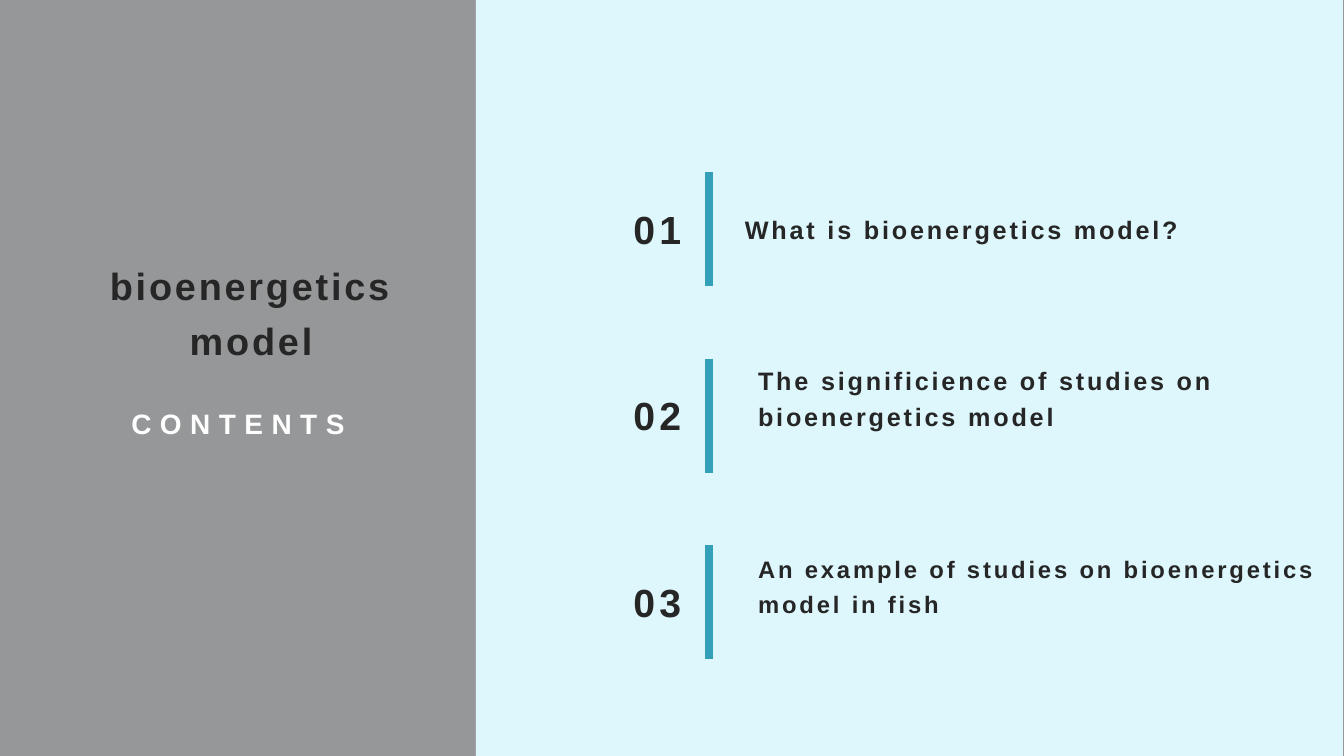
import pptx
import pptx.dml.color
import pptx.enum.shapes
import pptx.enum.text
import pptx.oxml.ns
import pptx.util
from lxml import etree

Inches = pptx.util.Inches
RGBColor = pptx.dml.color.RGBColor
ALIGN = pptx.enum.text.PP_ALIGN
ANCHOR = pptx.enum.text.MSO_ANCHOR

BACKGROUND = RGBColor(0xF9, 0xFD, 0xFE)
BLACK = RGBColor(0x00, 0x00, 0x00)
PALE_BLUE = RGBColor(0xDD, 0xF7, 0xFC)
TEAL = RGBColor(0x34, 0x9F, 0xB9)
DARK = RGBColor(0x26, 0x26, 0x26)
WHITE = RGBColor(0xFF, 0xFF, 0xFF)

TOPICS = [
    ("01", "What is bioenergetics model?", 18, (1.22, 0.23, 5.63, 0.49)),
    ("02", "The significience of studies on bioenergetics model", 18, (1.35, 0.21, 6.39, 0.51)),
    ("03", "An example of studies on bioenergetics model in fish", 17, (1.35, 0.23, 5.92, 0.49)),
]
TOPIC_LEFT, TOPIC_TOP, TOPIC_PITCH = 6.07, 1.71, 1.85


def add_panel(slide, left, top, width, height, color, opacity=None):
    panel = slide.shapes.add_shape(
        pptx.enum.shapes.MSO_SHAPE.RECTANGLE,
        Inches(left), Inches(top), Inches(width), Inches(height))
    panel.shadow.inherit = False
    panel.fill.solid()
    panel.fill.fore_color.rgb = color
    panel.line.fill.background()
    if opacity is not None:
        color_element = next(panel.fill._xPr.iter(pptx.oxml.ns.qn("a:srgbClr")))
        alpha = etree.SubElement(color_element, pptx.oxml.ns.qn("a:alpha"))
        alpha.set("val", str(opacity * 1000))


def add_text(slide, left, top, width, height, text, size, spacing, color=DARK,
             alignment=ALIGN.CENTER, anchor=ANCHOR.MIDDLE, line_spacing=1.2):
    box = slide.shapes.add_textbox(
        Inches(left), Inches(top), Inches(width), Inches(height))
    frame = box.text_frame
    frame.word_wrap = True
    frame.vertical_anchor = anchor
    if anchor == ANCHOR.BOTTOM:
        frame.margin_bottom = 0
    frame.text = text
    paragraph = frame.paragraphs[0]
    paragraph.alignment = alignment
    paragraph.line_spacing = line_spacing
    run = paragraph.runs[0]
    run.font.name = "Arial"
    run.font.size = pptx.util.Pt(size)
    run.font.bold = True
    run.font.color.rgb = color
    run.font._element.set("spc", str(spacing * 100))


def add_title_panel(slide, left, top):
    add_panel(slide, left, top, 13.33, 7.5, BLACK, opacity=40)
    add_panel(slide, left + 4.72, top, 8.6, 7.5, PALE_BLUE)
    add_text(slide, left + 0.97, top + 3.91, 2.78, 0.52, "CONTENTS", 20, 6, WHITE)
    add_text(slide, left + 0.8, top + 2.43, 3.38, 1.26, "bioenergetics model", 27, 2)


def add_topic(slide, left, top, number, label, label_size, label_box):
    add_text(slide, left, top + 0.23, 0.9, 0.66, number, 28, 3, line_spacing=1.0)
    bar = slide.shapes.add_connector(
        pptx.enum.shapes.MSO_CONNECTOR.STRAIGHT,
        Inches(left + 0.96), Inches(top), Inches(left + 0.96), Inches(top + 1.13))
    bar.line.color.rgb = TEAL
    bar.line.width = pptx.util.Pt(5.5)
    etree.SubElement(bar._element.spPr, pptx.oxml.ns.qn("a:effectLst"))
    offset_x, offset_y, width, height = label_box
    add_text(slide, left + offset_x, top + offset_y, width, height, label,
             label_size, 2, alignment=ALIGN.LEFT, anchor=ANCHOR.BOTTOM)


def main():
    presentation = pptx.Presentation()
    presentation.slide_width = Inches(13.33)
    presentation.slide_height = Inches(7.5)
    slide = presentation.slides.add_slide(presentation.slide_layouts[6])
    slide.background.fill.solid()
    slide.background.fill.fore_color.rgb = BACKGROUND
    add_title_panel(slide, 0, 0)
    for index, topic in enumerate(TOPICS):
        add_topic(slide, TOPIC_LEFT, TOPIC_TOP + index * TOPIC_PITCH, *topic)
    presentation.save("out.pptx")


if __name__ == "__main__":
    main()
